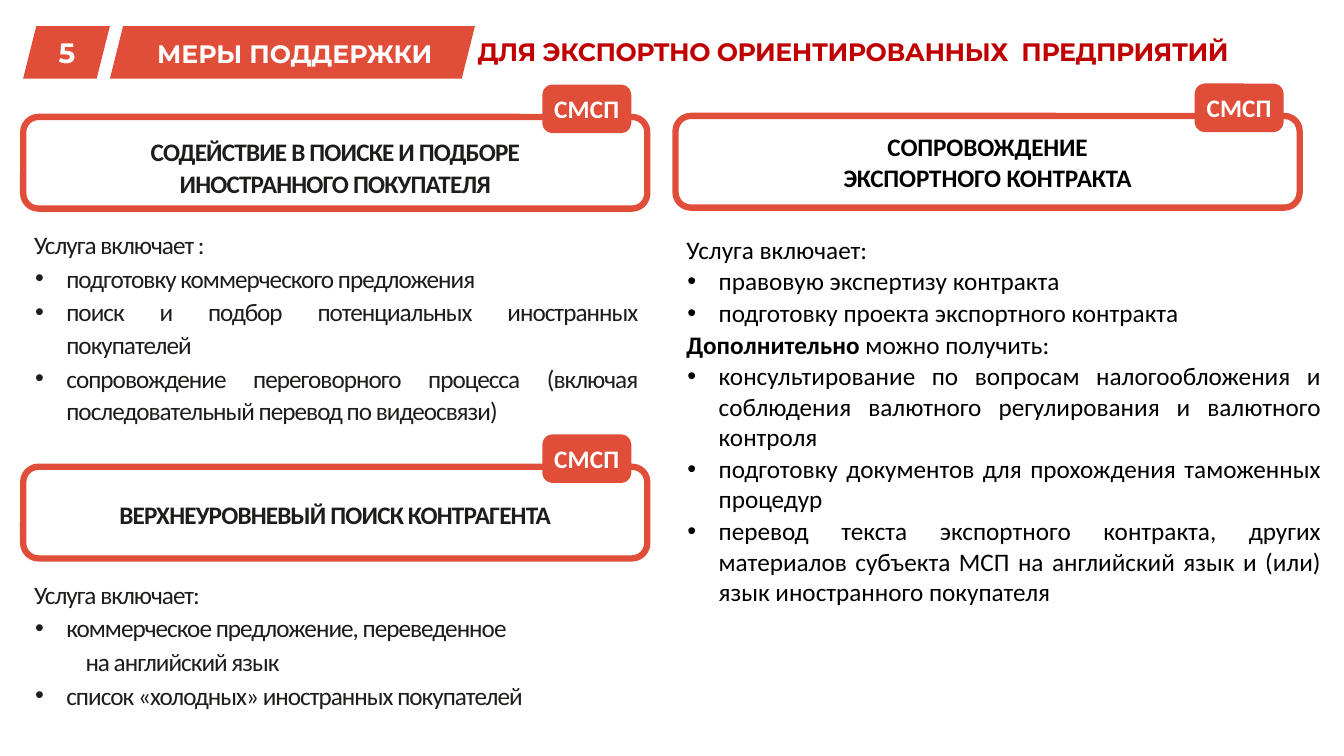
from lxml import etree
from pptx import Presentation
from pptx import util as u
from pptx.dml.color import RGBColor
from pptx.enum import shapes, text
from pptx.oxml import ns

COLORS = {"red": "E04D39", "title": "C00000", "ink": "1D1D1B", "black": "000000", "white": "FFFFFF"}
CENTER, JUSTIFY, LEFT = text.PP_ALIGN.CENTER, text.PP_ALIGN.JUSTIFY, text.PP_ALIGN.LEFT
CARD_WIDTH, CARD_HEIGHT = 6.19, 0.91


def color(name):
    return RGBColor.from_string(COLORS[name])


def style(run, ink, font="Calibri", size=18, bold=False, spacing=0):
    run.font.name, run.font.size, run.font.bold = font, u.Pt(size), bold
    run.font.color.rgb = color(ink)
    if spacing:
        run.font._element.set("spc", str(round(spacing * 100)))


def add_box(slide, left, top, width, height, wrap=True):
    box = slide.shapes.add_textbox(*map(u.Inches, (left, top, width, height)))
    box.text_frame.word_wrap = wrap
    return box.text_frame


def add_panel(slide, kind, left, top, width, height, filled=True, outlined=True):
    panel = slide.shapes.add_shape(kind, *map(u.Inches, (left, top, width, height)))
    panel.shadow.inherit = False
    if filled:
        panel.fill.solid()
        panel.fill.fore_color.rgb = color("red")
    else:
        panel.fill.background()
    if outlined:
        panel.line.color.rgb = color("red")
        panel.line.width = u.Pt(4.5)
    else:
        panel.line.fill.background()
    return panel


def paragraph_at(frame, index):
    return frame.paragraphs[0] if index == 0 else frame.add_paragraph()


def indent(paragraph, margin, hanging=0, bullet=False):
    properties = paragraph._p.get_or_add_pPr()
    properties.set("marL", str(u.Inches(margin)))
    properties.set("indent", str(u.Inches(-hanging)))
    if bullet:
        etree.SubElement(properties, ns.qn("a:buFont")).set("typeface", "Arial")
        etree.SubElement(properties, ns.qn("a:buChar")).set("char", "•")


def header(slide, left, top, number, label, title):
    for offset, width in ((0, 0.86), (0.86, 3.62)):
        add_panel(slide, shapes.MSO_SHAPE.PARALLELOGRAM, left + offset, top, width, 0.52, outlined=False)
    captions = (
        (number, 0.14, 0.04, 0.59, True, CENTER, "white", 20, 0),
        (label, 1.23, 0.07, 3.12, False, LEFT, "white", 18, 0),
        (title, 4.41, 0.05, 7.9, False, LEFT, "title", 18, -0.3),
    )
    for caption, dx, dy, width, wrap, align, ink, size, spacing in captions:
        frame = add_box(slide, left + dx, top + dy, width, 0.4, wrap)
        frame.text = caption
        frame.paragraphs[0].alignment = align
        style(frame.paragraphs[0].runs[0], ink, "Montserrat", size, True, spacing)


def card(slide, left, top, heading_top, heading, ink, spacing, line_spacing):
    outline = add_panel(slide, shapes.MSO_SHAPE.ROUNDED_RECTANGLE, left, top, CARD_WIDTH, CARD_HEIGHT, filled=False)
    outline.adjustments[0] = 0.167
    badge = add_panel(slide, shapes.MSO_SHAPE.FLOWCHART_ALTERNATE_PROCESS, left + 5.18, top - 0.29, 0.82, 0.42)
    badge.text_frame.word_wrap = False
    badge.text_frame.text = "СМСП"
    badge.text_frame.paragraphs[0].alignment = CENTER
    style(badge.text_frame.paragraphs[0].runs[0], "white", bold=True, spacing=0.1)

    frame = add_box(slide, left, heading_top, CARD_WIDTH, 0.36 * len(heading))
    for index, line in enumerate(heading):
        paragraph = paragraph_at(frame, index)
        paragraph.text = line
        paragraph.alignment = CENTER
        paragraph.line_spacing = line_spacing
        paragraph.space_before = u.Pt(0.8)
        style(paragraph.runs[0], ink, bold=True, spacing=spacing)


def service_list(slide, left, top, width, height, items, ink, align, line_spacing, spacing=0):
    frame = add_box(slide, left, top, width, height)
    for index, (level, lead, rest) in enumerate(items):
        paragraph = paragraph_at(frame, index)
        paragraph.alignment = align
        paragraph.line_spacing = line_spacing
        paragraph.space_before = u.Pt(0.8)
        if level == "bullet":
            indent(paragraph, 0.33, 0.31, True)
        else:
            indent(paragraph, 0.01 if level == "intro" else 0.52)
        for words, bold in ((lead, True), (rest, False)):
            if words:
                run = paragraph.add_run()
                run.text = words
                style(run, ink, bold=bold, spacing=spacing)


def main():
    deck = Presentation()
    deck.slide_width, deck.slide_height = u.Inches(13.33), u.Inches(7.5)
    slide = deck.slides.add_slide(deck.slide_layouts[6])
    left_column, right_column = 0.23, 6.7

    header(slide, left_column, 0.26, "5", "МЕРЫ ПОДДЕРЖКИ", "ДЛЯ ЭКСПОРТНО ОРИЕНТИРОВАННЫХ  ПРЕДПРИЯТИЙ")

    card(slide, left_column, 1.16, 1.3,
         ("СОДЕЙСТВИЕ В ПОИСКЕ И ПОДБОРЕ", "ИНОСТРАННОГО ПОКУПАТЕЛЯ"), "ink", -0.6, 1.01)
    service_list(slide, left_column, 2.2, CARD_WIDTH, 2.79, (
        ("intro", "", "Услуга включает :"),
        ("bullet", "", "подготовку коммерческого предложения"),
        ("bullet", "", "поиск и подбор потенциальных иностранных покупателей"),
        ("bullet", "", "сопровождение переговорного процесса (включая последовательный перевод по видеосвязи)"),
    ), "ink", JUSTIFY, 1.08, -0.7)

    card(slide, left_column, 4.63, 4.9, ("ВЕРХНЕУРОВНЕВЫЙ ПОИСК КОНТРАГЕНТА",), "ink", -0.6, 1.01)
    service_list(slide, left_column, 5.67, 6.04, 1.42, (
        ("intro", "", "Услуга включает:"),
        ("bullet", "", "коммерческое предложение, переведенное"),
        ("continued", "", "на английский язык"),
        ("bullet", "", "список «холодных» иностранных покупателей"),
    ), "ink", LEFT, 1.08, -0.7)

    card(slide, right_column, 1.15, 1.25,
         ("СОПРОВОЖДЕНИЕ", "ЭКСПОРТНОГО КОНТРАКТА"), "black", -0.1, 1)
    service_list(slide, right_column, 2.27, 6.5, 5.14, (
        ("intro", "", "Услуга включает:"),
        ("bullet", "", "правовую экспертизу контракта"),
        ("bullet", "", "подготовку проекта экспортного контракта"),
        ("intro", "Дополнительно", " можно получить:"),
        ("bullet", "", "консультирование по вопросам налогообложения и соблюдения "
                       "валютного регулирования и валютного контроля"),
        ("bullet", "", "подготовку документов для прохождения таможенных процедур"),
        ("bullet", "", "перевод текста экспортного контракта, других материалов субъекта МСП "
                       "на английский язык и (или) язык иностранного покупателя"),
    ), "black", JUSTIFY, 1.01)

    deck.save("out.pptx")


if __name__ == "__main__":
    main()
